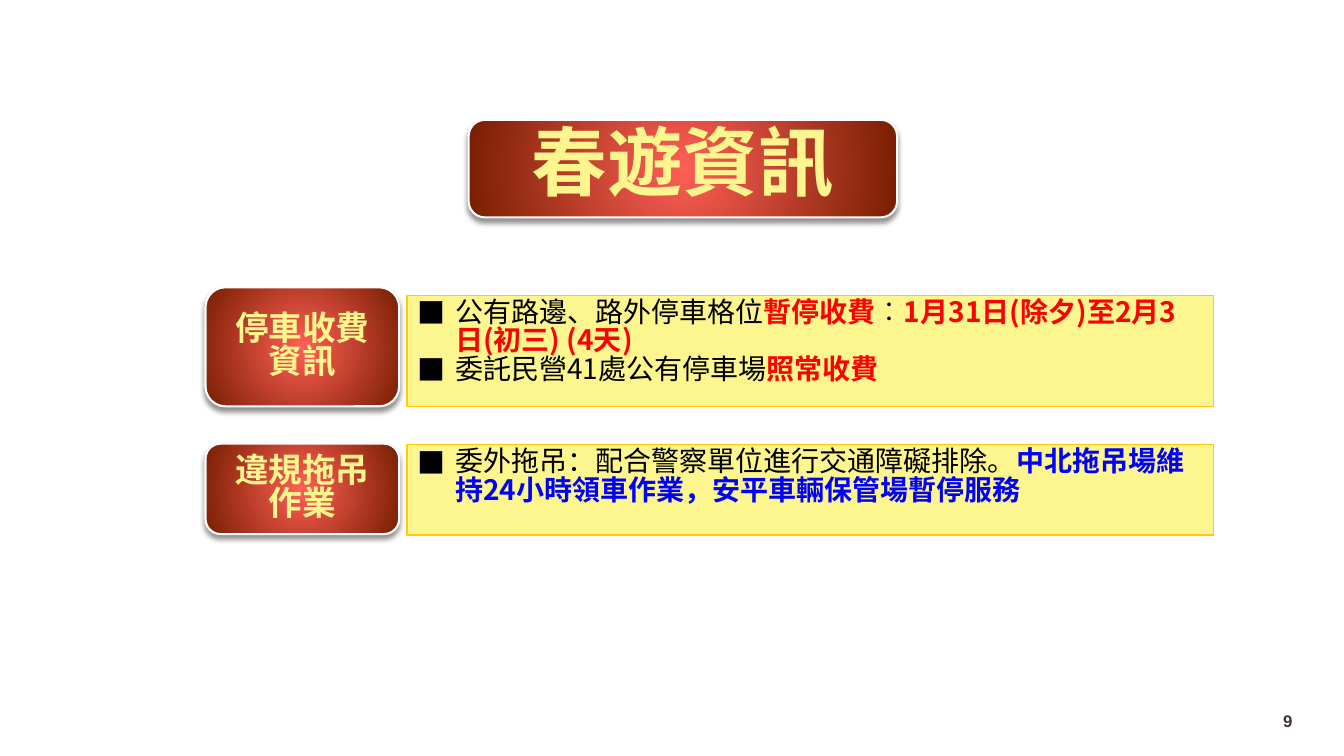
from lxml.etree import SubElement
from pptx import Presentation
from pptx.dml.color import RGBColor
from pptx.enum.shapes import MSO_SHAPE
from pptx.enum.text import MSO_ANCHOR, PP_ALIGN
from pptx.oxml import parse_xml
from pptx.oxml.ns import nsdecls, qn
from pptx.util import Cm, Pt

CJK = "Noto Sans CJK SC"
BLACK, RED, BLUE, YELLOW = "000000", "FF0000", "0000FF", "FDF58D"

TITLE = "春遊資訊"
PAGE = "9"
SECTIONS = [
    {
        "label": ["停車收費", "資訊"], "label_box": (7.24, 3.0), "note_box": (7.44, 2.8),
        "notes": [
            [("公有路邊、路外停車格位", BLACK), ("暫停收費", RED), ("︰", BLACK),
             ("1月31日(除夕)至2月3日(初三) (4天)", RED)],
            [("委託民營41處公有停車場", BLACK), ("照常收費", RED)],
        ],
    },
    {
        "label": ["違規拖吊", "作業"], "label_box": (11.18, 2.28), "note_box": (11.2, 2.28),
        "notes": [
            [("委外拖吊：配合警察單位進行交通障礙排除。", BLACK),
             ("中北拖吊場維持24小時領車作業，安平車輛保管場暫停服務", BLUE)],
        ],
    },
]
LABEL_LEFT, LABEL_WIDTH = 5.18, 4.88
NOTE_LEFT, NOTE_WIDTH = 10.26, 20.32


def rgb(color):
    return RGBColor.from_string(color)


def add_run(p, text, size=20, font=CJK, color=BLACK, bold=False):
    r = p.add_run()
    r.text = text
    r.font.size, r.font.name, r.font.bold = Pt(size), font, bold
    r.font.color.rgb = rgb(color)
    SubElement(r.font._element, qn("a:ea")).set("typeface", CJK)


def add_box(s, kind, left, top, width, height, line, weight):
    sp = s.shapes.add_shape(kind, Cm(left), Cm(top), Cm(width), Cm(height))
    sp.shadow.inherit = False
    sp.line.color.rgb = rgb(line)
    sp.line.width = Pt(weight)
    return sp


def add_plaque(s, lines, left, top, width, height, size):
    sp = add_box(s, MSO_SHAPE.ROUNDED_RECTANGLE, left, top, width, height, "FFFFFF", 1.5)
    sp.fill.gradient()
    for stop, color in zip(sp.fill.gradient_stops, ("FF5F56", "781E00")):
        stop.color.rgb = rgb(color)
    lin = sp._element.spPr.find(".//" + qn("a:lin"))
    lin.getparent().replace(lin, parse_xml(
        f'<a:path {nsdecls("a")} path="circle">'
        '<a:fillToRect l="50000" t="50000" r="50000" b="50000"/></a:path>'))
    sp._element.spPr.find(qn("a:effectLst")).append(parse_xml(
        f'<a:outerShdw {nsdecls("a")} blurRad="{Pt(4)}" dist="{Pt(3)}" dir="5400000" '
        'rotWithShape="0"><a:srgbClr val="000000"><a:alpha val="44000"/></a:srgbClr>'
        '</a:outerShdw>'))
    tf = sp.text_frame
    tf.word_wrap = False
    tf.vertical_anchor = MSO_ANCHOR.MIDDLE
    for i, text in enumerate(lines):
        p = tf.add_paragraph() if i else tf.paragraphs[0]
        p.alignment = PP_ALIGN.CENTER
        p.line_spacing = 0.82
        add_run(p, text, size=size, font="Arial", color=YELLOW, bold=True)


def add_bullet(p):
    pPr = p._p.get_or_add_pPr()
    pPr.set("marL", str(Cm(0.96)))
    pPr.set("indent", str(Cm(-0.94)))
    SubElement(SubElement(pPr, qn("a:buClr")), qn("a:srgbClr")).set("val", BLACK)
    SubElement(pPr, qn("a:buFont")).set("typeface", CJK)
    SubElement(pPr, qn("a:buChar")).set("char", "■")


def add_notes(s, notes, top, height):
    sp = add_box(s, MSO_SHAPE.RECTANGLE, NOTE_LEFT, top, NOTE_WIDTH, height, "FFCA08", 1)
    sp.fill.solid()
    sp.fill.fore_color.rgb = rgb(YELLOW)
    tf = sp.text_frame
    tf.word_wrap = True
    tf.vertical_anchor = MSO_ANCHOR.TOP
    for i, parts in enumerate(notes):
        p = tf.add_paragraph() if i else tf.paragraphs[0]
        p.alignment = PP_ALIGN.LEFT
        add_bullet(p)
        p.line_spacing = 0.84
        for text, color in parts:
            add_run(p, text, color=color, bold=color != BLACK)


def main():
    """Build the spring outing information slide."""
    prs = Presentation()
    prs.slide_width, prs.slide_height = Cm(33.87), Cm(19.05)
    s = prs.slides.add_slide(prs.slide_layouts[6])
    for section in SECTIONS:
        add_notes(s, section["notes"], *section["note_box"])
        top, height = section["label_box"]
        add_plaque(s, section["label"], LABEL_LEFT, top, LABEL_WIDTH, height, 24)
    add_plaque(s, [TITLE], 11.81, 3.02, 10.8, 2.46, 54)

    tf = s.shapes.add_textbox(Cm(25.2), Cm(17.65), Cm(7.62), Cm(1.02)).text_frame
    tf.word_wrap = True
    tf.vertical_anchor = MSO_ANCHOR.MIDDLE
    p = tf.paragraphs[0]
    p.alignment = PP_ALIGN.RIGHT
    add_run(p, PAGE, size=12, font="Arial", color="41342F", bold=True)
    prs.save("out.pptx")


if __name__ == "__main__":
    main()
